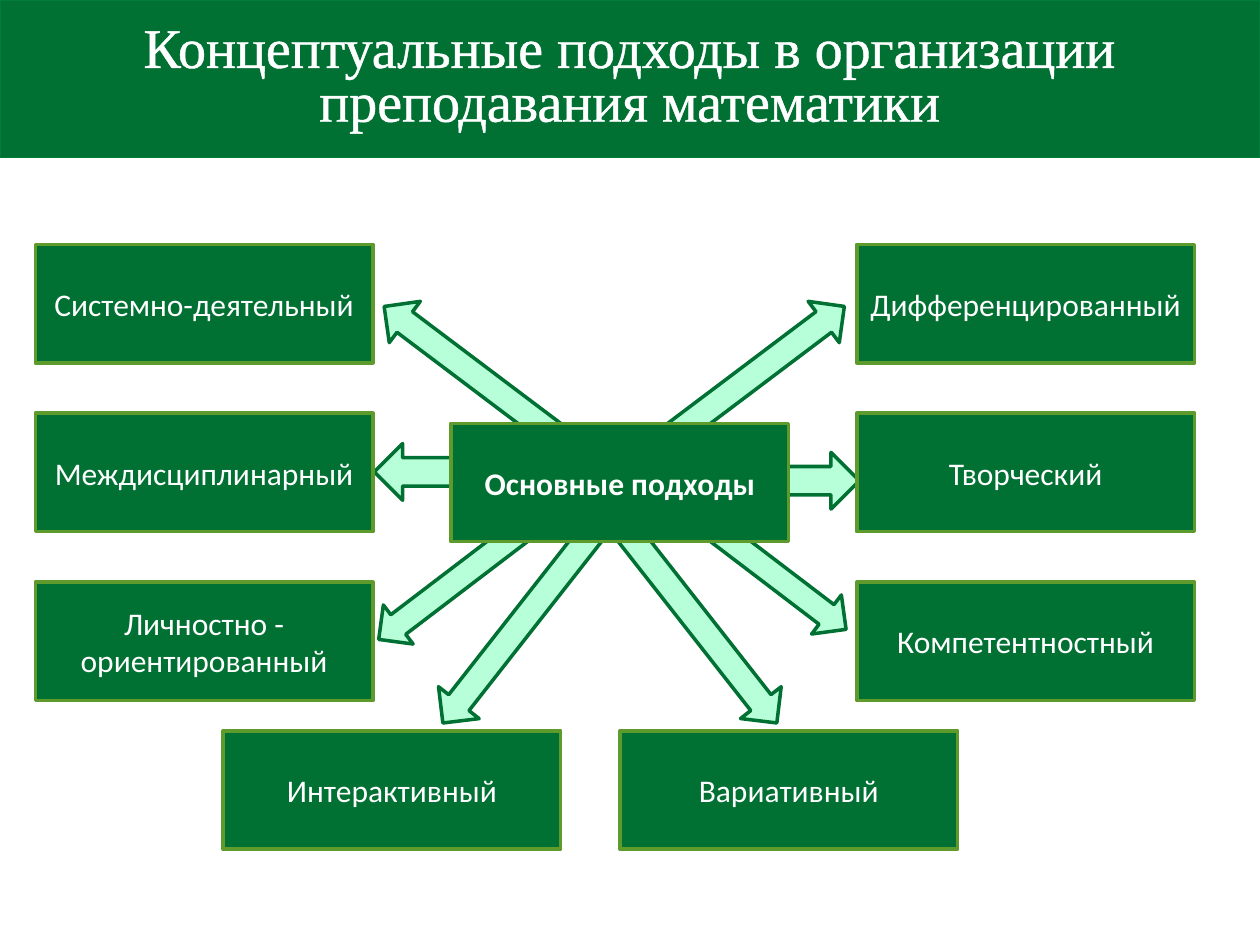
import pptx
import pptx.dml.color
import pptx.enum.shapes
import pptx.enum.text
import pptx.oxml
import pptx.oxml.ns
import pptx.util

Inches = pptx.util.Inches
Pt = pptx.util.Pt
SHAPE = pptx.enum.shapes.MSO_SHAPE


def color(hex_string):
    return pptx.dml.color.RGBColor.from_string(hex_string)


class SlideBuilder:
    GREEN = "007033"
    BANNER_EDGE = "007E39"
    BOX_EDGE = "5E9B2C"
    MINT = "B7FFD8"
    WHITE = "FFFFFF"
    BODY_FONT = "Calibri"
    TITLE_FONT = "Times New Roman"

    def __init__(self, slide):
        self.slide = slide

    def shape(self, kind, left, top, width, height, fill, line, line_width):
        shape = self.slide.shapes.add_shape(
            kind, Inches(left), Inches(top), Inches(width), Inches(height))
        shape.shadow.inherit = False
        shape.fill.solid()
        shape.fill.fore_color.rgb = color(fill)
        shape.line.color.rgb = color(line)
        shape.line.width = Pt(line_width)
        return shape

    def label(self, shape, text, font_name, size, bold=False):
        frame = shape.text_frame
        frame.word_wrap = True
        frame.vertical_anchor = pptx.enum.text.MSO_ANCHOR.MIDDLE
        paragraph = frame.paragraphs[0]
        paragraph.alignment = pptx.enum.text.PP_ALIGN.CENTER
        run = paragraph.add_run()
        run.text = text
        run.font.name = font_name
        run.font.size = Pt(size)
        run.font.bold = bold
        run.font.color.rgb = color(self.WHITE)
        return paragraph, run

    def arrow(self, left, top, width, height, rotation):
        shape = self.shape(SHAPE.RIGHT_ARROW, left, top, width, height,
                           self.MINT, self.GREEN, 2)
        shape.rotation = rotation

    def box(self, text, left, top, bold=False):
        shape = self.shape(SHAPE.RECTANGLE, left, top, 2.68, 0.94,
                           self.GREEN, self.BOX_EDGE, 2)
        self.label(shape, text, self.BODY_FONT, 18, bold)

    def title(self, text, width, height):
        self.shape(SHAPE.RECTANGLE, 0, 0, width, height,
                   self.GREEN, self.BANNER_EDGE, 0.75)
        title = self.slide.shapes.title
        title.left, title.top = Inches(0), Inches(0)
        title.width, title.height = Inches(width), Inches(height)
        paragraph, run = self.label(title, text, self.TITLE_FONT, 32)
        paragraph.line_spacing = 0.8
        # Thin white outline around the letters, placed before the fill
        outline = pptx.oxml.parse_xml(
            f'<a:ln {pptx.oxml.ns.nsdecls("a")} w="{Pt(1.45)}"><a:solidFill>'
            f'<a:srgbClr val="{self.WHITE}"/></a:solidFill></a:ln>')
        run._r.get_or_add_rPr().insert(0, outline)
        # Bring the title in front of the banner
        title.element.getparent().append(title.element)


def main():
    presentation = pptx.Presentation()
    presentation.slide_width = Inches(10)
    presentation.slide_height = Inches(7.5)
    slide = presentation.slides.add_slide(presentation.slide_layouts[5])
    builder = SlideBuilder(slide)

    # Arrows from the centre: left, top, width, height, rotation
    for arrow in [
        (2.86, 4.45, 1.42, 0.39, 142.7),
        (3.08, 4.64, 2.27, 0.41, 128.1),
        (4.33, 4.64, 2.27, 0.41, 51.9),
        (2.97, 3.52, 0.65, 0.45, 180),
        (4.66, 2.91, 2.27, 0.41, 323),
        (5.44, 4.37, 1.42, 0.39, 37.3),
        (6.17, 3.59, 0.65, 0.45, 0),
        (2.82, 2.91, 2.27, 0.41, 217),
    ]:
        builder.arrow(*arrow)

    # Central box and the approaches around it
    builder.box("Основные подходы", 3.58, 3.36, bold=True)
    columns = {
        0.28: ["Системно-деятельный", "Междисциплинарный",
               "Личностно - ориентированный"],
        6.8: ["Дифференцированный", "Творческий", "Компетентностный"],
    }
    for left, names in columns.items():
        for row, name in enumerate(names):
            builder.box(name, left, 1.94 + 1.34 * row)
    builder.box("Интерактивный", 1.77, 5.8)
    builder.box("Вариативный", 4.92, 5.8)

    # Title banner
    builder.title("Концептуальные подходы в организации преподавания математики",
                  10, 1.25)
    presentation.save("out.pptx")


if __name__ == "__main__":
    main()
